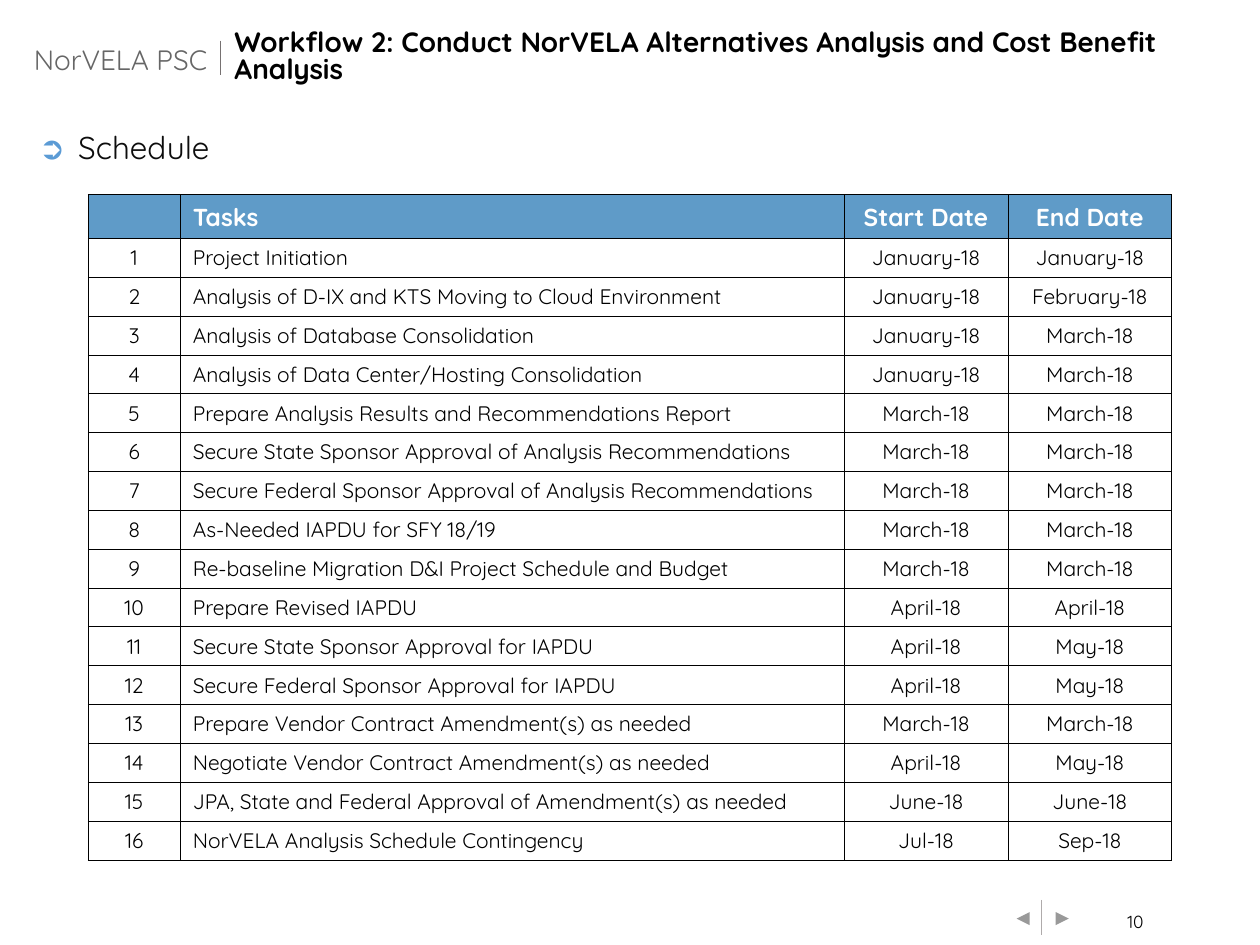
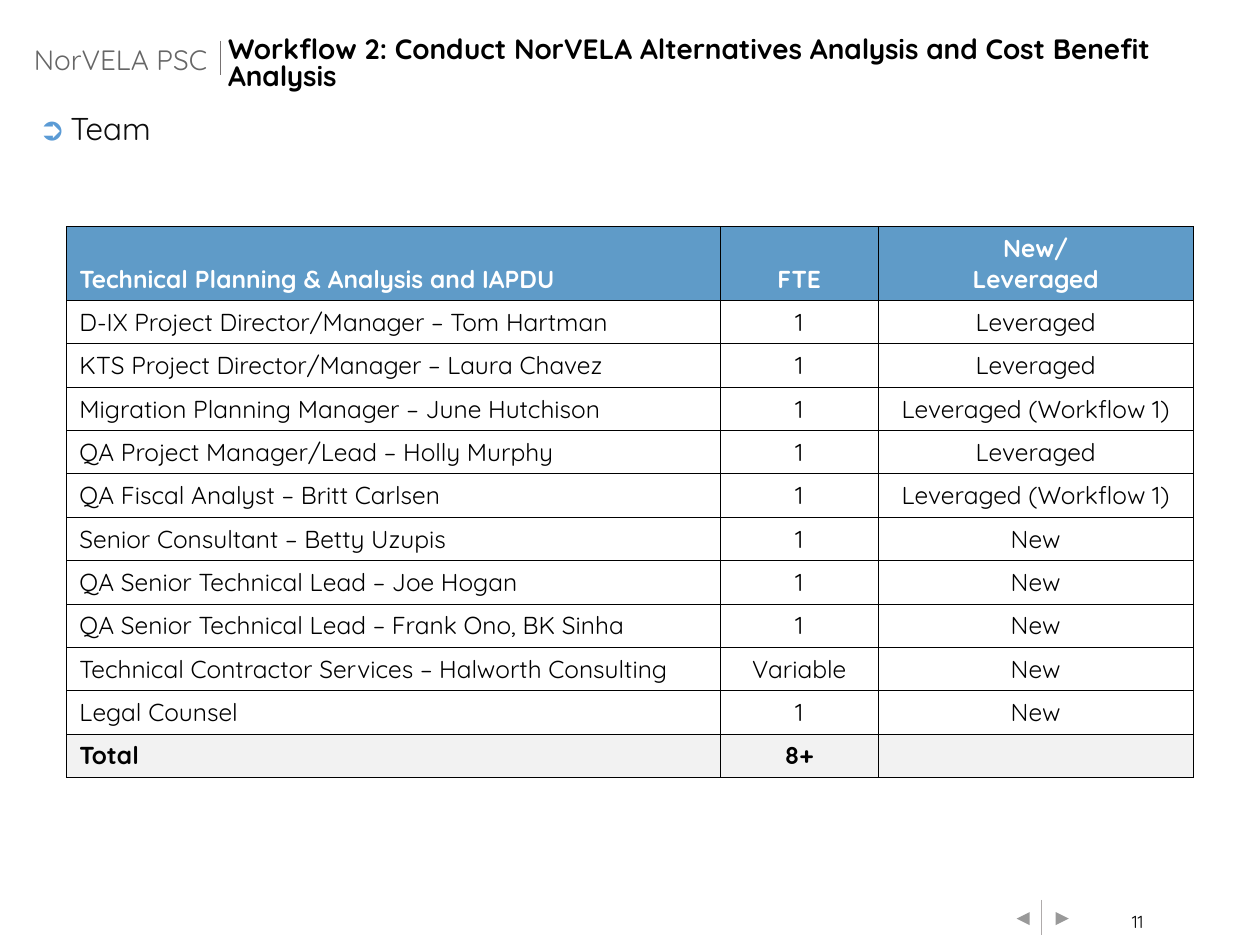
from dataclasses import dataclass
from lxml.etree import SubElement as Sub
from pptx import Presentation
from pptx.dml.color import RGBColor as RGB
from pptx.enum.shapes import MSO_CONNECTOR as Conn, MSO_SHAPE as Shape
from pptx.enum.text import MSO_ANCHOR as Anchor, MSO_AUTO_SIZE as Auto, PP_ALIGN as Align
from pptx.oxml.ns import qn
from pptx.util import Pt


@dataclass(frozen=True)
class Theme:
    font: str = "Quicksand"
    black: str = "000000"
    white: str = "FFFFFF"
    ink: str = "0D0D0D"
    brand: str = "666666"
    rule: str = "767171"
    soft: str = "AFABAB"
    mark: str = "5B9BD5"
    head: str = "5F9BC8"
    total: str = "F2F2F2"
    lead: int = 18
    title: int = 16
    large: int = 14
    small: int = 12
    page: int = 10
    hair: float = 0.5


T = Theme()
TITLE = "Workflow 2: Conduct NorVELA Alternatives Analysis and Cost Benefit Analysis"
FLAT = {"margin_left": 0, "margin_right": 0, "vertical_anchor": Anchor.MIDDLE}

TASKS = [
    ("", "Tasks", "Start Date", "End Date"),
    ("1", "Project Initiation", "January-18", "January-18"),
    ("2", "Analysis of D-IX and KTS Moving to Cloud Environment", "January-18", "February-18"),
    ("3", "Analysis of Database Consolidation", "January-18", "March-18"),
    ("4", "Analysis of Data Center/Hosting Consolidation", "January-18", "March-18"),
    ("5", "Prepare Analysis Results and Recommendations Report", "March-18", "March-18"),
    ("6", "Secure State Sponsor Approval of Analysis Recommendations", "March-18", "March-18"),
    ("7", "Secure Federal Sponsor Approval of Analysis Recommendations", "March-18", "March-18"),
    ("8", "As-Needed IAPDU for SFY 18/19", "March-18", "March-18"),
    ("9", "Re-baseline Migration D&I Project Schedule and Budget", "March-18", "March-18"),
    ("10", "Prepare Revised IAPDU", "April-18", "April-18"),
    ("11", "Secure State Sponsor Approval for IAPDU", "April-18", "May-18"),
    ("12", "Secure Federal Sponsor Approval for IAPDU", "April-18", "May-18"),
    ("13", "Prepare Vendor Contract Amendment(s) as needed", "March-18", "March-18"),
    ("14", "Negotiate Vendor Contract Amendment(s) as needed", "April-18", "May-18"),
    ("15", "JPA, State and Federal Approval of Amendment(s) as needed", "June-18", "June-18"),
    ("16", "NorVELA Analysis Schedule Contingency", "Jul-18", "Sep-18"),
]
TEAM = [
    ("Technical Planning & Analysis and IAPDU", "FTE", "New/\vLeveraged"),
    ("D-IX Project Director/Manager – Tom Hartman", "1", "Leveraged"),
    ("KTS Project Director/Manager – Laura Chavez", "1", "Leveraged"),
    ("Migration Planning Manager – June Hutchison", "1", "Leveraged (Workflow 1)"),
    ("QA Project Manager/Lead – Holly Murphy", "1", "Leveraged"),
    ("QA Fiscal Analyst – Britt Carlsen", "1", "Leveraged (Workflow 1)"),
    ("Senior Consultant – Betty Uzupis", "1", "New"),
    ("QA Senior Technical Lead – Joe Hogan", "1", "New"),
    ("QA Senior Technical Lead – Frank Ono, BK Sinha", "1", "New"),
    ("Technical Contractor Services – Halworth Consulting", "Variable", "New"),
    ("Legal Counsel", "1", "New"),
    ("Total", "8+", ""),
]


def apply(obj, **vals):
    for key, val in vals.items():
        setattr(obj, key, val)


def paint(fill, color):
    fill.solid()
    fill.fore_color.rgb = RGB.from_string(color)


def write(frame, text, size, color, bold=False, **form):
    """Fill the first paragraph; form holds paragraph values."""
    para = frame.paragraphs[0]
    para.text = text
    apply(para, **form)
    for run in para.runs:
        apply(run.font, name=T.font, size=Pt(size), bold=bold)
        run.font.color.rgb = RGB.from_string(color)
    # Breaks and empty cells keep the same type size
    for gap in para._p.findall(qn("a:br")):
        Sub(gap, qn("a:rPr"), sz=str(size * 100))
    if not text:
        Sub(para._p, qn("a:endParaRPr"), sz=str(size * 100))
    return para


def add_text(slide, box, text, size, color, frame=None, **form):
    area = slide.shapes.add_textbox(*map(Pt, box)).text_frame
    apply(area, **{"word_wrap": True, **(frame or {})})
    return write(area, text, size, color, **form)


def add_rule(slide, x, top, end, color):
    line = slide.shapes.add_connector(Conn.STRAIGHT, Pt(x), Pt(top), Pt(x), Pt(end))
    line.line.width = Pt(T.hair)
    line.line.color.rgb = RGB.from_string(color)
    Sub(line._element.spPr, qn("a:effectLst"))


def add_arrow(slide, x, turn):
    arrow = slide.shapes.add_shape(
        Shape.ACTION_BUTTON_FORWARD_OR_NEXT, Pt(x), Pt(518.4), Pt(10), Pt(13))
    arrow.rotation = turn
    arrow.shadow.inherit = False
    paint(arrow.fill, T.white)
    arrow.line.fill.background()


def add_frame(slide, page):
    # Header brand
    add_text(slide, (19.4, 20.6, 172, 26.6), "NorVELA PSC", T.title, T.brand, FLAT)
    add_rule(slide, 126, 23.2, 43, T.rule)
    # Footer arrows and page number
    add_arrow(slide, 602, 0)
    add_arrow(slide, 579.6, 180)
    add_rule(slide, 595, 514.2, 534.2, T.soft)
    edge = {"margin_left": Pt(5.76), "margin_right": Pt(5.76), "margin_top": Pt(2.88),
            "margin_bottom": Pt(2.88), "word_wrap": False, "auto_size": Auto.SHAPE_TO_FIT_TEXT}
    add_text(slide, (636.2, 517.7, 23, 17.3), str(page), T.page, T.black, edge,
             alignment=Align.RIGHT)


def set_title(slide, box):
    head = slide.shapes.title
    apply(head, **dict(zip(("left", "top", "width", "height"), map(Pt, box))))
    apply(head.text_frame, word_wrap=True, auto_size=Auto.NONE, **FLAT)
    write(head.text_frame, TITLE, T.title, T.black, True,
          alignment=Align.LEFT, line_spacing=0.8, space_before=Pt(10))


def add_lead(slide, text, top, dent):
    para = add_text(slide, (15.1, top, 689.8, 412.6), text, T.lead, T.ink,
                    line_spacing=0.9, space_before=Pt(10))
    props = para._p.get_or_add_pPr()
    props.set("marL", str(Pt(dent)))
    props.set("indent", str(-Pt(dent)))
    Sub(Sub(props, qn("a:buClr")), qn("a:srgbClr"), val=T.mark)
    Sub(props, qn("a:buFont"), typeface=T.font)
    Sub(props, qn("a:buChar"), char="➲")


def add_edges(cell):
    props = cell._tc.get_or_add_tcPr()
    for side in ("lnL", "lnR", "lnT", "lnB"):
        line = Sub(props, qn("a:" + side), w=str(Pt(T.hair)))
        Sub(Sub(line, qn("a:solidFill")), qn("a:srgbClr"), val=T.black)


def add_grid(slide, spot, rows, cols, highs, size, names, anchor, total=False):
    """highs: header and body row heights; names: the left-aligned column."""
    tall = highs[0] + highs[1] * (len(rows) - 1)
    grid = slide.shapes.add_table(
        len(rows), len(cols), *map(Pt, (*spot, sum(cols), tall))).table
    apply(grid, first_row=False, horz_banding=False)
    for col, wide in zip(grid.columns, cols):
        col.width = Pt(wide)
    for i, row in enumerate(rows):
        head, last = i == 0, total and i == len(rows) - 1
        grid.rows[i].height = Pt(highs[0] if head else highs[1])
        for j, text in enumerate(row):
            cell = grid.cell(i, j)
            add_edges(cell)
            paint(cell.fill, T.head if head else T.total if last else T.white)
            cell.vertical_anchor = Anchor.BOTTOM if head else anchor
            write(cell.text_frame, text, T.large if head else size,
                  T.white if head else T.black, head or last,
                  alignment=Align.LEFT if j == names else Align.CENTER)


def main():
    deck = Presentation()
    apply(deck, slide_width=Pt(720), slide_height=Pt(540))
    plain = deck.slide_layouts[5]

    # Schedule
    slide = deck.slides.add_slide(plain)
    add_frame(slide, 10)
    add_lead(slide, "Schedule", 72, 22.5)
    set_title(slide, (134, 12.2, 579, 41.8))
    add_grid(slide, (50.4, 111.3), TASKS, (52.6, 379.4, 93.6, 93.6), (25, 22.2),
             T.small, 1, Anchor.MIDDLE)

    # Team
    slide = deck.slides.add_slide(plain)
    add_frame(slide, 11)
    add_lead(slide, "Team", 61.4, 18)
    set_title(slide, (130.3, 16.6, 582.5, 41))
    add_grid(slide, (38.2, 129.4), TEAM, (373.5, 90, 180.2), (42.3, 24.78),
             T.large, 0, Anchor.BOTTOM, total=True)

    deck.save("out.pptx")


if __name__ == "__main__":
    main()
